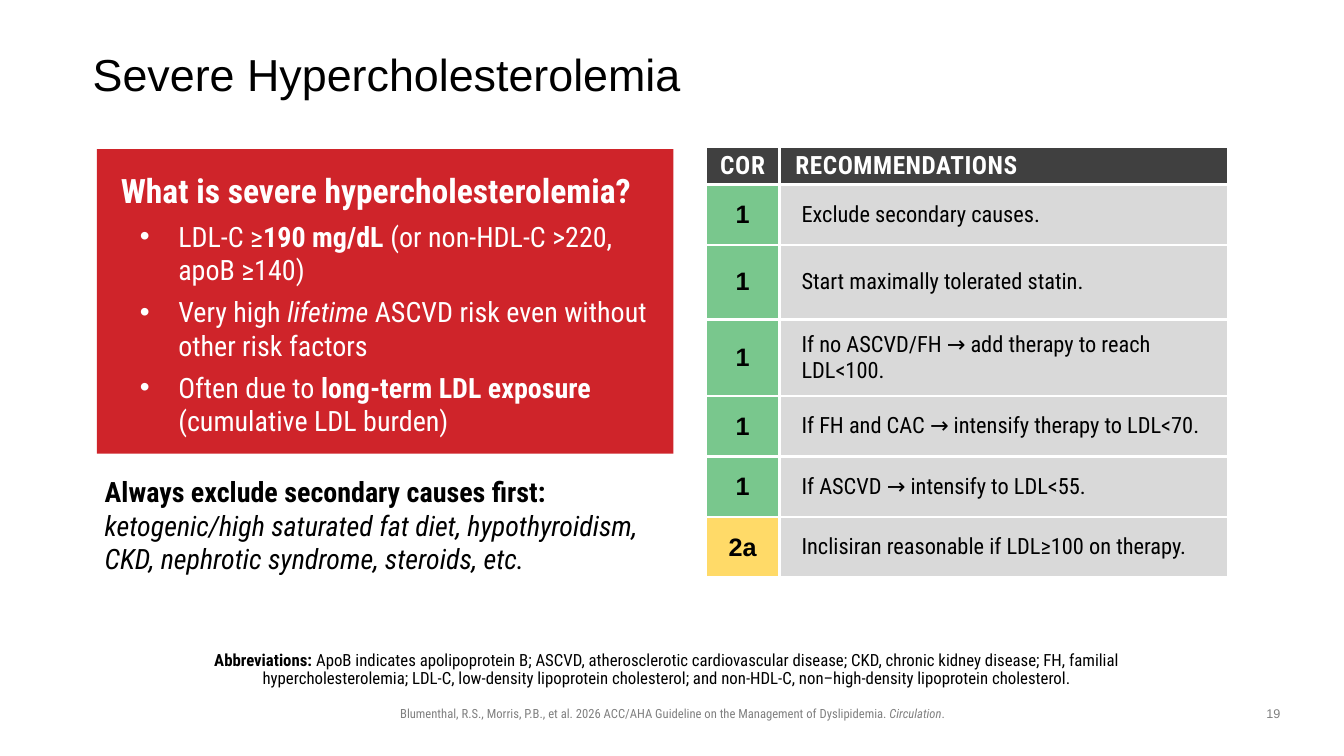
from lxml import etree
from pptx import Presentation
from pptx import util as u
from pptx.dml import color
from pptx.enum import shapes, text
from pptx.oxml import ns

SCALE = 9144  # EMU in one px, 100 px to the inch
CONDENSED = "Roboto Condensed"
BLACK, WHITE, GREY = "000000", "FFFFFF", "808080"
RED, DARK, PALE = "CF242A", "404040", "D9D9D9"
CLASS_COLOURS = {"1": "79C78D", "2a": "FFDA68"}
CENTER = text.PP_ALIGN.CENTER
MIDDLE = text.MSO_ANCHOR.MIDDLE
BOLD, ITALIC = {"bold": True}, {"italic": True}

DEFINITION = [
    [("LDL-C ≥", {}), ("190 mg/dL ", BOLD), ("(or non-HDL-C >220, apoB ≥140)", {})],
    [("Very high ", {}), ("lifetime", ITALIC),
     (" ASCVD risk even without other risk factors", {})],
    [("Often due to ", {}), ("long-term LDL exposure ", BOLD),
     ("(cumulative LDL burden)", {})],
]
RECOMMENDATIONS = [
    ("1", "Exclude secondary causes.", 60),
    ("1", "Start maximally tolerated statin.", 74),
    ("1", "If no ASCVD/FH → add therapy to reach LDL<100.", 76),
    ("1", "If FH and CAC → intensify therapy to LDL<70.", 60),
    ("1", "If ASCVD → intensify to LDL<55.", 60),
    ("2a", "Inclisiran reasonable if LDL≥100 on therapy.", 60),
]


def px(length):
    return u.Emu(length * SCALE)


def rgb(value):
    return color.RGBColor.from_string(value)


def apply(target, values):
    for name, value in values.items():
        setattr(target, name, value)


def write(para, spans, size, colour=BLACK, font=CONDENSED, tracking=0, **layout):
    """Fill a paragraph with (words, format) spans."""
    for words, extra in spans:
        span = para.add_run()
        span.text = words
        apply(span.font, {"name": font, "size": u.Pt(size), **extra})
        span.font.color.rgb = rgb(colour)
        if tracking:
            span._r.get_or_add_rPr().set("spc", str(tracking))
    apply(para, layout)


def indent(para, left, first=0, bullet=None):
    props = para._p.get_or_add_pPr()
    props.set("marL", str(px(left)))
    props.set("indent", str(px(first)))
    if bullet:
        etree.SubElement(props, ns.qn("a:buFont")).set("typeface", "Arial")
        etree.SubElement(props, ns.qn("a:buChar")).set("char", bullet)


def add_text(page, place, **frame_format):
    """Add a wrapping text box and return its frame."""
    frame = page.shapes.add_textbox(*map(px, place)).text_frame
    apply(frame, {"word_wrap": True, **frame_format})
    return frame


def add_panel(page, place, colour):
    panel = page.shapes.add_shape(shapes.MSO_SHAPE.RECTANGLE, *map(px, place))
    panel.shadow.inherit = False
    panel.fill.solid()
    panel.fill.fore_color.rgb = rgb(colour)
    panel.line.fill.background()


def border(cell, colour, width):
    props = cell._tc.get_or_add_tcPr()
    for index, side in enumerate(("lnL", "lnR", "lnT", "lnB")):
        line = etree.Element(ns.qn(f"a:{side}"), w=str(u.Pt(width)))
        fill = etree.SubElement(line, ns.qn("a:solidFill"))
        etree.SubElement(fill, ns.qn("a:srgbClr")).set("val", colour)
        props.insert(index, line)


def fill_cell(cell, words, fill, size, left=0, margins=None, **style):
    cell.fill.solid()
    cell.fill.fore_color.rgb = rgb(fill)
    apply(cell, {"vertical_anchor": MIDDLE, **(margins or {})})
    border(cell, WHITE, 2.25)
    para = cell.text_frame.paragraphs[0]
    if left:
        indent(para, left)
    bold = {"bold": size == 18}
    write(para, [(words, bold)], size, **style)


def add_recommendations(page):
    heights = [38] + [height for *_, height in RECOMMENDATIONS]
    table = page.shapes.add_table(
        len(heights), 2, *map(px, (700, 145, 518, sum(heights)))).table
    for column, width in zip(table.columns, (73, 445)):
        column.width = px(width)
    for row, height in zip(table.rows, heights):
        row.height = px(height)

    # Header row
    slim = {"margin_top": px(4), "margin_bottom": px(2)}
    header = {"fill": DARK, "size": 18, "colour": WHITE, "margins": slim}
    fill_cell(table.cell(0, 0), "COR", tracking=50, alignment=CENTER, **header)
    fill_cell(table.cell(0, 1), "RECOMMENDATIONS", left=6, tracking=40, **header)

    # Class and recommendation rows
    sides = ("left", "right", "top", "bottom")
    even = {f"margin_{side}": px(5) for side in sides}
    for index, (level, advice, _) in enumerate(RECOMMENDATIONS, 1):
        fill_cell(table.cell(index, 0), level, CLASS_COLOURS[level], 18,
                  margins=even, font="Arial", alignment=CENTER)
        fill_cell(table.cell(index, 1), advice, PALE, 16, left=12)


def add_definition(page):
    add_panel(page, (96, 148, 572, 302), RED)
    frame = add_text(page, (110, 164, 547, 278))
    write(frame.paragraphs[0], [("What is severe hypercholesterolemia?", BOLD)],
          24, WHITE)
    for spans in DEFINITION:
        para = frame.add_paragraph()
        indent(para, 57, -38, "•")
        write(para, spans, 20, WHITE, space_before=u.Pt(6))


def main():
    deck = Presentation()
    apply(deck, {"slide_width": px(1333), "slide_height": px(750)})
    page = deck.slides.add_slide(deck.slide_layouts[6])

    # Title
    flush = {f"margin_{side}": 0 for side in ("left", "right", "top", "bottom")}
    frame = add_text(page, (92, 40, 1150, 72), vertical_anchor=MIDDLE, **flush)
    write(frame.paragraphs[0], [("Severe Hypercholesterolemia", {})], 32,
          font="Arial", line_spacing=0.9)

    # Left column
    add_definition(page)
    frame = add_text(page, (94, 466, 585, 111))
    write(frame.paragraphs[0], [
        ("Always exclude secondary causes first: ", BOLD),
        ("ketogenic/high saturated fat diet, hypothyroidism, CKD, "
         "nephrotic syndrome, steroids, etc.", ITALIC)], 20)

    # Right column
    add_recommendations(page)

    # Abbreviations
    frame = add_text(page, (188, 642, 957, 46), margin_left=0,
                     vertical_anchor=text.MSO_ANCHOR.BOTTOM)
    write(frame.paragraphs[0], [
        ("Abbreviations:", BOLD),
        (" ApoB indicates apolipoprotein B; ASCVD, atherosclerotic cardiovascular "
         "disease; CKD, chronic kidney disease; FH, familial hypercholesterolemia; "
         "LDL-C, low-density lipoprotein cholesterol; and non-HDL-C, "
         "non–high-density lipoprotein cholesterol.", {})],
        12, alignment=CENTER, line_spacing=0.9)

    # Citation and page number
    frame = add_text(page, (236, 695, 862, 25))
    write(frame.paragraphs[0], [
        ("Blumenthal, R.S., Morris, P.B., et al. 2026 ACC/AHA Guideline on the "
         "Management of Dyslipidemia. ", {}),
        ("Circulation", ITALIC), (".", {})], 9, GREY, alignment=CENTER)
    frame = add_text(page, (1242, 695, 42, 26))
    write(frame.paragraphs[0], [("19", {})], 9, GREY, "Arial", alignment=CENTER)

    deck.save("out.pptx")


if __name__ == "__main__":
    main()
